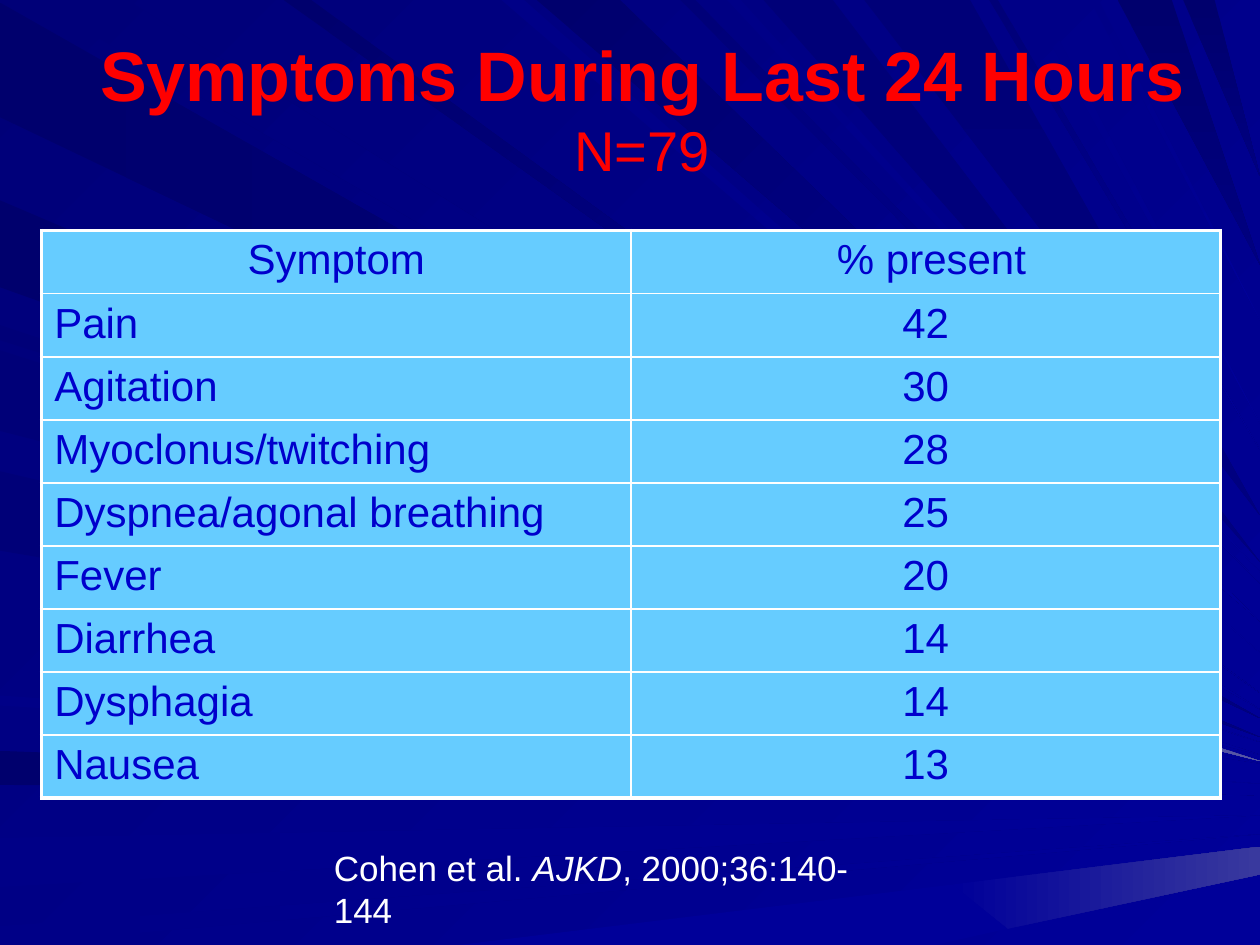
"""Build a slide with a table of symptoms in the last 24 hours over a blue ray backdrop."""
from lxml import etree
from pptx import Presentation
from pptx.dml.color import RGBColor
from pptx.enum.text import MSO_ANCHOR, PP_ALIGN
from pptx.oxml.ns import qn
from pptx.util import Cm, Pt

MIDDLE = MSO_ANCHOR.MIDDLE
LEFT, CENTER = PP_ALIGN.LEFT, PP_ALIGN.CENTER
DEEP = RGBColor(0x00, 0x00, 0x6D)
DARK = RGBColor(0x00, 0x00, 0x78)
NAVY = RGBColor(0x00, 0x00, 0x80)
ROYAL = RGBColor(0x00, 0x00, 0x87)
BLUE = RGBColor(0x00, 0x00, 0x99)
DUSK = RGBColor(0x39, 0x39, 0x9E)
MIST = RGBColor(0x5A, 0x5A, 0xA6)
RED = RGBColor(0xFF, 0x00, 0x00)
WHITE = RGBColor(0xFF, 0xFF, 0xFF)
SKY = RGBColor(0x66, 0xCC, 0xFF)
INK = RGBColor(0x00, 0x00, 0xCC)
FONT = "Arial"
GRID = Cm(2.54) / 100
EDGE = 1000


def shade(fill, first, last, angle):
    fill.gradient()
    fill.gradient_angle = -angle % 360
    for stop, color in zip(fill.gradient_stops, (first, last)):
        stop.color.rgb = color


def style(para, size, color, align=LEFT):
    para.alignment = align
    para.font.name = FONT
    para.font.size = Pt(size)
    para.font.color.rgb = color


deck = Presentation()
deck.slide_width, deck.slide_height = Cm(25.4), Cm(19.05)
slide = deck.slides.add_slide(deck.slide_layouts[6])
shade(slide.background.fill, DARK, BLUE, 45)

side = [
    (2, 93, 570, DEEP, NAVY),
    (596, 623, 632, DEEP, BLUE),
    (665, 704, 647, ROYAL, BLUE),
    (735, 750, 662, ROYAL, BLUE),
    (258, 270, 589, DARK, BLUE),
    (159, 228, 585, DEEP, NAVY),
    (278, 342, 599, DARK, BLUE),
    (374, 437, 606, DARK, BLUE),
    (552, 560, 622, ROYAL, BLUE),
]
top = [
    (26, 101, 563, DARK, BLUE),
    (398, 416, 518, ROYAL, BLUE),
    (426, 492, 493, DEEP, BLUE),
    (540, 552, 463, DARK, BLUE),
    (606, 661, 446, DARK, NAVY),
    (887, 930, 210, DEEP, NAVY),
    (939, 964, 140, DEEP, NAVY),
    (225, 247, 550, DEEP, BLUE),
    (577, 588, 454, ROYAL, BLUE),
    (686, 770, 409, DARK, NAVY),
    (785, 792, 357, DARK, BLUE),
    (815, 824, 336, ROYAL, BLUE),
    (865, 872, 254, ROYAL, BLUE),
]
rays = [([(0, a), (0, b), (EDGE, end)], first, last, 0) for a, b, end, first, last in side]
rays += [
    ([(a, 0), (b, 0), (EDGE, end)], first, last, 90 if last == NAVY else 45)
    for a, b, end, first, last in top
]
rays += [
    ([(364, 750), (742, 750), (800, 737), (756, 702)], BLUE, BLUE, 0),
    ([(756, 702), (EDGE, 672), (EDGE, 694), (800, 737)], BLUE, DUSK, 0),
    ([(637, 485), (633, 511), (EDGE, 604)], BLUE, MIST, 0),
]
group = slide.shapes.add_group_shape()
for points, first, last, angle in rays:
    pen = group.shapes.build_freeform(*points[0], scale=GRID)
    pen.add_line_segments(points[1:], close=True)
    ray = pen.convert_to_shape()
    ray.shadow.inherit = False
    ray.line.fill.background()
    shade(ray.fill, first, last, angle)

title = slide.shapes.add_textbox(Cm(1.07), Cm(0.61), Cm(23.75), Cm(3.1)).text_frame
title.word_wrap = True
title.vertical_anchor = MIDDLE
para = title.paragraphs[0]
style(para, 40, RED, CENTER)
head = para.add_run()
head.text = "Symptoms During Last 24 Hours"
head.font.bold = True
para.add_line_break()
count = para.add_run()
count.text = "N=79"
count.font.size = Pt(32)

rows = [
    ("Symptom", " % present"),
    ("Pain", "42"),
    ("Agitation", "30"),
    ("Myoclonus/twitching", "28"),
    ("Dyspnea/agonal breathing", "25"),
    ("Fever", "20"),
    ("Diarrhea", "14"),
    ("Dysphagia", "14"),
    ("Nausea", "13"),
]
final = len(rows) - 1
table = slide.shapes.add_table(
    len(rows), 2, Cm(0.84), Cm(4.65), Cm(23.76), Cm(1.24) * len(rows)
).table
for r, row in enumerate(rows):
    table.rows[r].height = Cm(1.24)
    for c, text in enumerate(row):
        cell = table.cell(r, c)
        edges = {"L": c == 0, "R": c == 1, "T": r == 0, "B": r == final}
        props = cell._tc.get_or_add_tcPr()
        for edge, outer in edges.items():
            width = Pt(2.25 if outer else 1)
            line = etree.SubElement(props, qn(f"a:ln{edge}"), w=str(width))
            solid = etree.SubElement(line, qn("a:solidFill"))
            etree.SubElement(solid, qn("a:srgbClr"), val=str(WHITE))
        cell.fill.solid()
        cell.fill.fore_color.rgb = SKY
        cell.text = text
        para = cell.text_frame.paragraphs[0]
        style(para, 24, INK, CENTER if r == 0 or c == 1 else LEFT)
        para.font.bold = False

source = slide.shapes.add_textbox(Cm(6.48), Cm(16.94), Cm(11.95), Cm(1.1)).text_frame
source.word_wrap = True
para = source.paragraphs[0]
style(para, 20, WHITE)
for text, slant in [("Cohen et al. ", False), ("AJKD", True), (", 2000;36:140-144", False)]:
    run = para.add_run()
    run.text = text
    run.font.italic = slant

deck.save("out.pptx")
